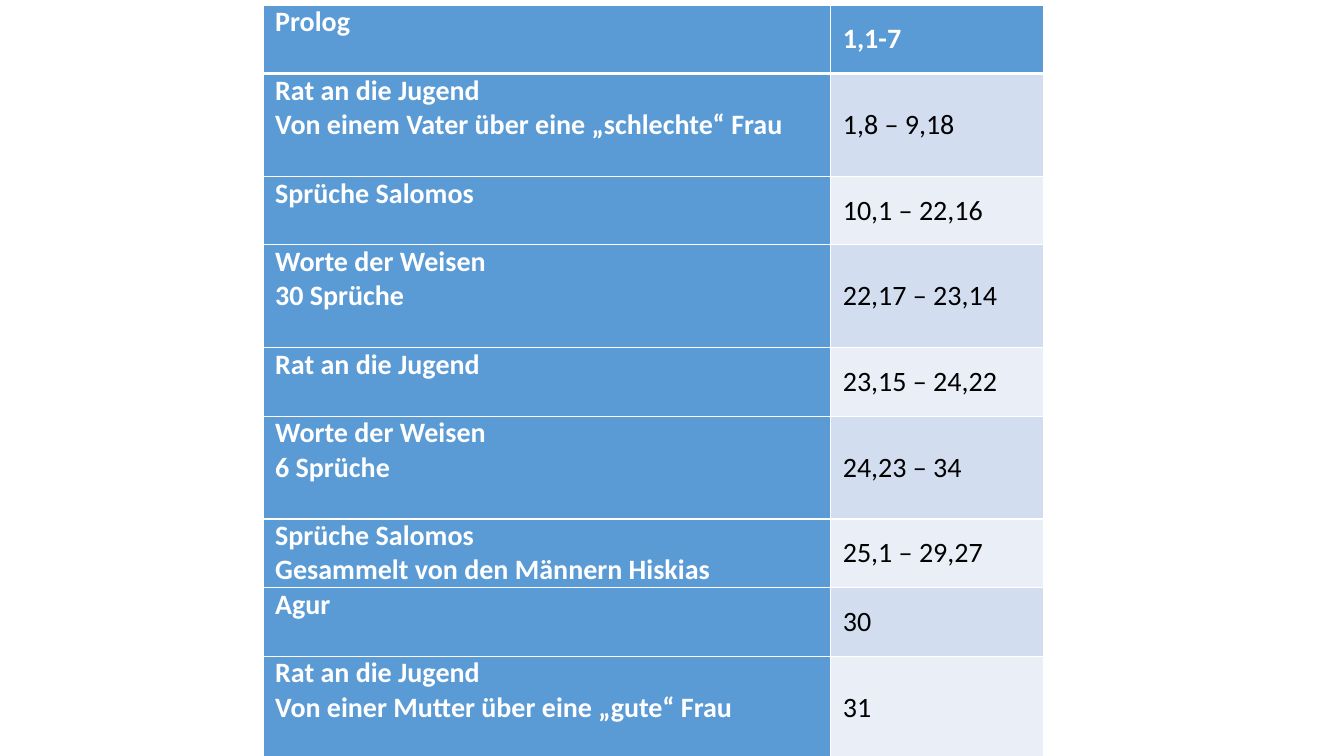
from lxml import etree
from pptx import Presentation
from pptx import util as u
from pptx.dml.color import RGBColor
from pptx.enum import text
from pptx.oxml import ns

SECTIONS = [
    (["Prolog"], "1,1-7", 2),
    (["Rat an die Jugend", "Von einem Vater über eine „schlechte“ Frau"], "1,8 – 9,18", 3),
    (["Sprüche Salomos"], "10,1 – 22,16", 2),
    (["Worte der Weisen", "30 Sprüche"], "22,17 – 23,14", 3),
    (["Rat an die Jugend"], "23,15 – 24,22", 2),
    (["Worte der Weisen", "6 Sprüche"], "24,23 – 34", 3),
    (["Sprüche Salomos", "Gesammelt von den Männern Hiskias"], "25,1 – 29,27", 2),
    (["Agur"], "30", 2),
    (["Rat an die Jugend", "Von einer Mutter über eine „gute“ Frau"], "31", 3),
]
WHITE = RGBColor(0xFF, 0xFF, 0xFF)
BLACK = RGBColor(0, 0, 0)
BLUE = RGBColor(0x5B, 0x9B, 0xD5)
BANDS = [RGBColor(0xEA, 0xEF, 0xF7), RGBColor(0xD2, 0xDE, 0xEF)]
FONT = "Calibri"
FONT_SIZE = u.Pt(20)
LEFT, TOP = u.Inches(2.61), u.Inches(0.05)
COLUMN_WIDTHS = [u.Inches(5.63), u.Inches(2.11)]
LINE_HEIGHT = u.Inches(0.34)
SIDE_MARGIN = u.Inches(0.12)


def add_border(cell, side, points):
    properties = cell._tc.get_or_add_tcPr()
    line = etree.SubElement(properties, ns.qn(f"a:ln{side}"), w=str(u.Pt(points)))
    fill = etree.SubElement(line, ns.qn("a:solidFill"))
    etree.SubElement(fill, ns.qn("a:srgbClr"), val=str(WHITE))


def fill_cell(cell, lines, background, color, bold, anchor, edges):
    for side, points in edges.items():
        add_border(cell, side, points)
    cell.fill.solid()
    cell.fill.fore_color.rgb = background
    cell.margin_left = cell.margin_right = SIDE_MARGIN
    cell.margin_top = cell.margin_bottom = 0
    cell.vertical_anchor = anchor
    cell.text_frame.text = "\n".join(lines)
    for paragraph in cell.text_frame.paragraphs:
        font = paragraph.runs[0].font
        font.name, font.size, font.bold = FONT, FONT_SIZE, bold
        font.color.rgb = color


def main():
    presentation = Presentation()
    presentation.slide_width = u.Inches(13.33)
    presentation.slide_height = u.Inches(7.5)
    slide = presentation.slides.add_slide(presentation.slide_layouts[6])
    height = LINE_HEIGHT * sum(lines for _, _, lines in SECTIONS)
    table = slide.shapes.add_table(
        len(SECTIONS), 2, LEFT, TOP, sum(COLUMN_WIDTHS), height
    ).table
    table.first_col = True
    for column, width in zip(table.columns, COLUMN_WIDTHS):
        column.width = width
    for index, (titles, verses, lines) in enumerate(SECTIONS):
        table.rows[index].height = LINE_HEIGHT * lines
        header = index == 0
        edges = {"L": 1, "R": 1, "T": 3 if index == 1 else 1, "B": 3 if header else 1}
        fill_cell(table.cell(index, 0), titles, BLUE, WHITE, True,
                  text.MSO_ANCHOR.TOP, edges)
        fill_cell(table.cell(index, 1), [verses],
                  BLUE if header else BANDS[index % 2],
                  WHITE if header else BLACK, header,
                  text.MSO_ANCHOR.MIDDLE, edges)
    presentation.save("out.pptx")


if __name__ == "__main__":
    main()
